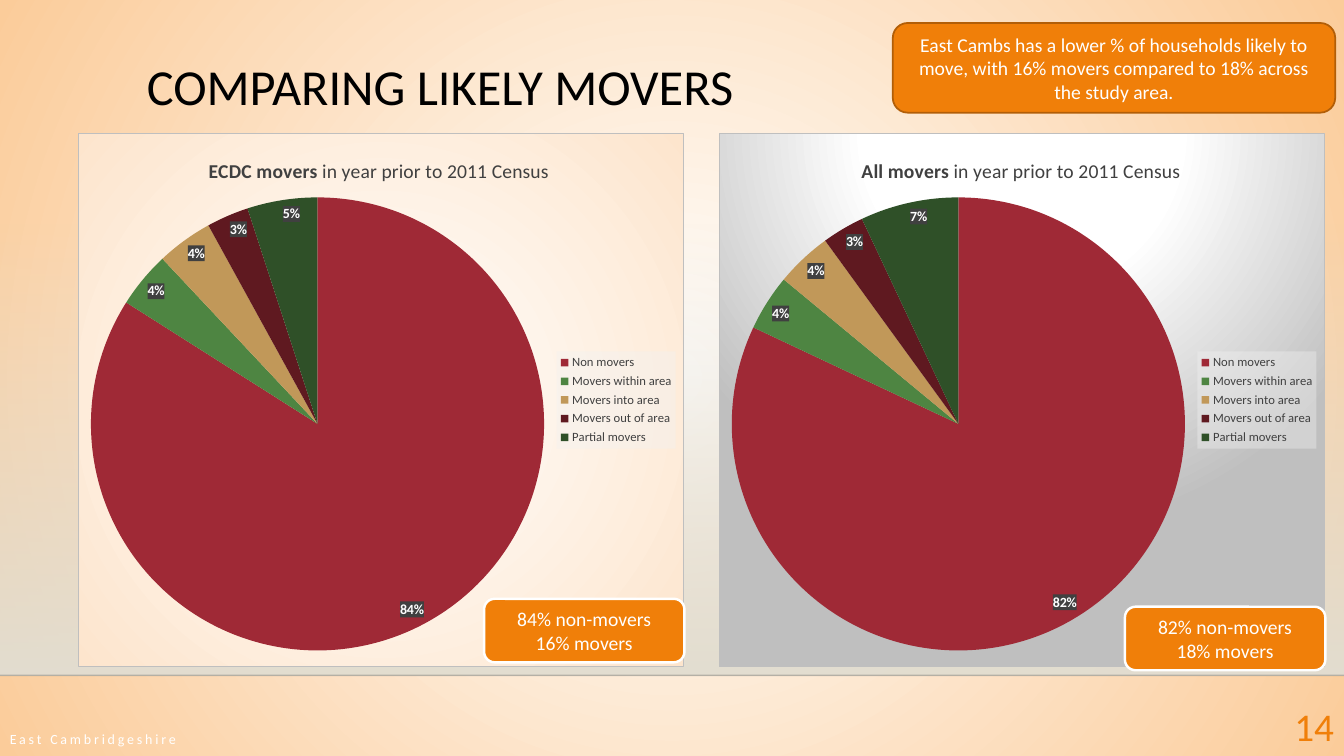
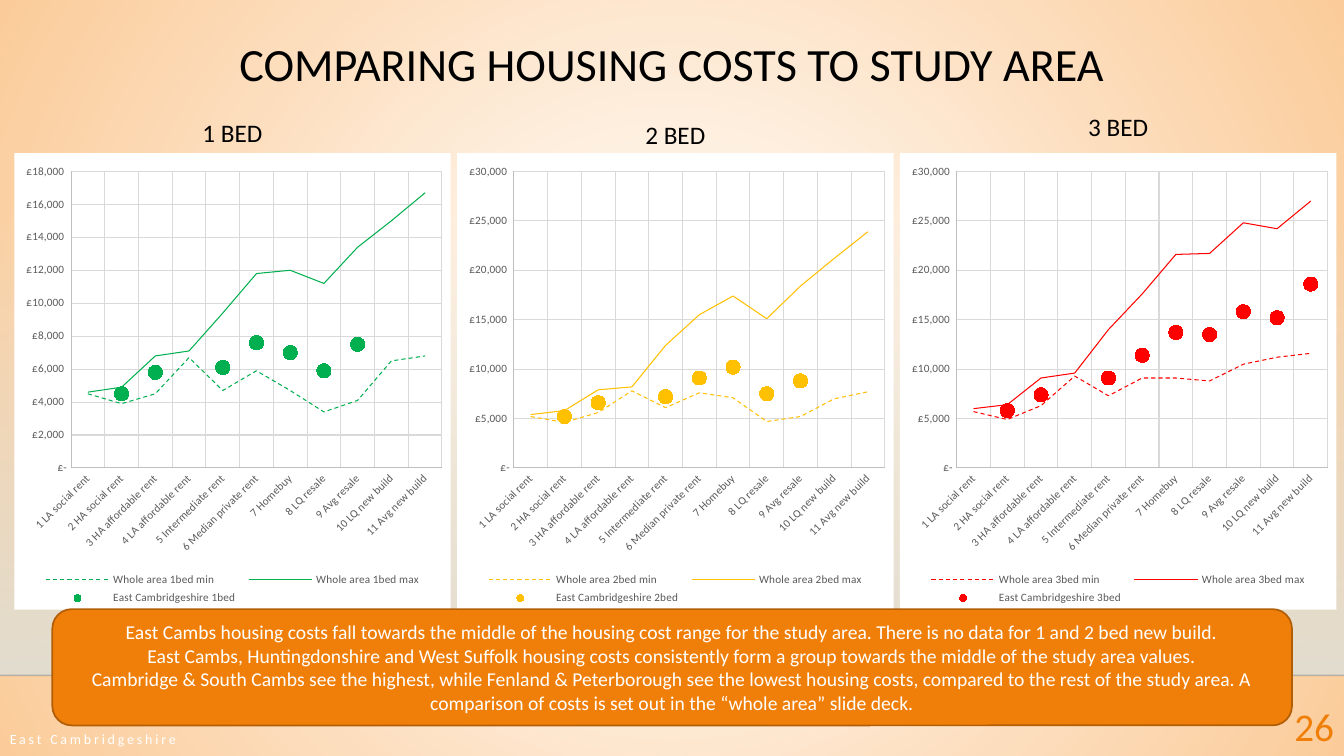
from dataclasses import dataclass
from lxml import etree
from pptx import Presentation
from pptx.chart.data import CategoryChartData
from pptx.dml.color import RGBColor
from pptx.enum.chart import (XL_CHART_TYPE, XL_LABEL_POSITION, XL_LEGEND_POSITION,
                             XL_MARKER_STYLE, XL_TICK_MARK)
from pptx.enum.dml import MSO_LINE
from pptx.enum.shapes import MSO_CONNECTOR, MSO_SHAPE
from pptx.enum.text import MSO_ANCHOR, MSO_AUTO_SIZE, PP_ALIGN
from pptx.oxml.ns import nsdecls, qn
from pptx.util import Cm, Pt


@dataclass(frozen=True)
class Theme:
    font: str = "Calibri"
    black: str = "000000"
    white: str = "FFFFFF"
    accent: str = "F07F09"
    accent_dark: str = "B25E07"
    peach: str = "FBCC9A"
    peach_light: str = "FDE5CD"
    stone: str = "E3DED1"
    rule: str = "000001"
    silver: str = "BFBFBF"
    grid: str = "D9D9D9"
    legend_back: str = "F2F2F2"
    axis_text: str = "595959"
    dark: str = "404040"
    slices: tuple = ("9F2936", "4E8542", "C19859", "5F1920", "2F5028")
    body: int = 14
    heading: int = 18
    number: int = 28
    small: int = 10
    legend: int = 9
    axis: int = 8


@dataclass(frozen=True)
class Box:
    x: float
    y: float
    w: float
    h: float

    def cm(self):
        return Cm(self.x), Cm(self.y), Cm(self.w), Cm(self.h)


T = Theme()
WIDTH, HEIGHT = 33.87, 19.05
CENTRE = (50, 50, 50, 50)
MOVER_GROUPS = ("Non movers", "Movers within area", "Movers into area",
                "Movers out of area", "Partial movers")
TENURES = ("1 LA social rent", "2 HA social rent", "3 HA affordable rent",
           "4 LA affordable rent", "5 Intermediate rent", "6 Median private rent",
           "7 Homebuy", "8 LQ resale", "9 Avg resale", "10 LQ new build",
           "11 Avg new build")
POUNDS = '_-"£"* #,##0_-;\\-"£"* #,##0_-;_-"£"* "-"'


# XML helpers
def rgb(code):
    return RGBColor.from_string(code)


def color_xml(code, alpha=100):
    return f'<a:srgbClr val="{code}"><a:alpha val="{alpha * 1000}"/></a:srgbClr>'


def solid_xml(code, alpha=100):
    return f"<a:solidFill>{color_xml(code, alpha)}</a:solidFill>"


def gradient_xml(stops, centre=None):
    """Circular around the centre, or running downwards without one."""
    gs = "".join(f'<a:gs pos="{pos * 1000}">{color_xml(*c)}</a:gs>' for pos, *c in stops)
    if centre:
        sides = " ".join(f'{k}="{v * 1000}"' for k, v in zip("ltrb", centre))
        way = f'<a:path path="circle"><a:fillToRect {sides}/></a:path>'
    else:
        way = '<a:lin ang="5400000" scaled="0"/>'
    return f'<a:gradFill {nsdecls("a")} rotWithShape="1"><a:gsLst>{gs}</a:gsLst>{way}</a:gradFill>'


def chart_fill(after, fill, border=None):
    line = f'<a:ln w="9525">{solid_xml(border)}</a:ln>' if border else "<a:ln><a:noFill/></a:ln>"
    after.addnext(etree.fromstring(f'<c:spPr {nsdecls("c", "a")}>{fill}{line}</c:spPr>'))


def set_layout(parent, index, inner=False, **place):
    for old in parent.findall(qn("c:layout")):
        parent.remove(old)
    target = '<c:layoutTarget val="inner"/>' if inner else ""
    modes = "".join(f'<c:{k}Mode val="edge"/>' for k in "xy")
    sizes = "".join(f'<c:{k} val="{v}"/>' for k, v in place.items())
    parent.insert(index, etree.fromstring(
        f'<c:layout {nsdecls("c")}><c:manualLayout>{target}{modes}{sizes}'
        "</c:manualLayout></c:layout>"))


# Text and shapes
def style_font(font, size, color, bold=None):
    font.name, font.size, font.bold = T.font, Pt(size), bold
    font.color.rgb = rgb(color)


def write(sp, lines, size, color, align=PP_ALIGN.LEFT, anchor=MSO_ANCHOR.TOP, spacing=None):
    tf = sp.text_frame
    tf.word_wrap, tf.auto_size, tf.vertical_anchor = True, MSO_AUTO_SIZE.NONE, anchor
    tf.text = "\n".join(lines)
    for p in tf.paragraphs:
        p.alignment, p.line_spacing = align, spacing
        for r in p.runs:
            style_font(r.font, size, color)


def add_text(slide, box, text, size, color, **layout):
    sp = slide.shapes.add_textbox(*box.cm())
    write(sp, [text], size, color, **layout)
    return sp


def add_callout(slide, box, lines, border=T.accent_dark, weight=1.25):
    sp = slide.shapes.add_shape(MSO_SHAPE.ROUNDED_RECTANGLE, *box.cm())
    sp.shadow.inherit = False
    sp.fill.solid()
    sp.fill.fore_color.rgb = rgb(T.accent)
    sp.line.color.rgb = rgb(border)
    sp.line.width = Pt(weight)
    write(sp, lines, T.body, T.white, PP_ALIGN.CENTER, MSO_ANCHOR.MIDDLE)


# Shared background, band and rule on the master
def dress_master(prs, slide):
    master = prs.slide_master
    master.background.fill.background()
    empty = master._element.find(".//" + qn("a:noFill"))
    empty.getparent().replace(empty, etree.fromstring(
        gradient_xml([(0, T.white), (100, T.peach)], CENTRE)))
    band = Box(0, 5.61, WIDTH, 11.41)
    sp = slide.shapes.add_shape(MSO_SHAPE.RECTANGLE, *band.cm())
    sp.shadow.inherit = False
    sp.line.fill.background()
    sp.fill.background()
    sp._element.spPr.replace(sp._element.spPr.find(qn("a:noFill")), etree.fromstring(
        gradient_xml([(0, T.stone, 0), (100, T.stone)])))
    bottom = Cm(band.y + band.h)
    rule = slide.shapes.add_connector(MSO_CONNECTOR.STRAIGHT, 0, bottom, Cm(WIDTH), bottom)
    rule.line.width = Pt(1)
    rule.line.color.rgb = rgb(T.rule)
    spPr = rule._element.spPr
    etree.SubElement(spPr.find(".//" + qn("a:srgbClr")), qn("a:alpha"), val="20000")
    etree.SubElement(spPr, qn("a:effectLst"))
    for part in (sp, rule):
        master.shapes._spTree.append(part._element)


def add_title(slide, box, text, size, align, spacing):
    title = slide.shapes.title
    title.left, title.top, title.width, title.height = box.cm()
    write(title, [text], size, T.black, align, MSO_ANCHOR.MIDDLE, spacing)


def add_footer(slide, number):
    sp = add_text(slide, Box(0, 18.19, 14, 0.86), "East Cambridgeshire", T.small, T.white,
                  anchor=MSO_ANCHOR.MIDDLE)
    sp.text_frame.paragraphs[0].runs[0]._r.get_or_add_rPr().set("spc", "200")
    add_text(slide, Box(31.62, 17.58, 2.25, 1.4), str(number), T.number, T.accent,
             align=PP_ALIGN.RIGHT)


# Charts
def add_chart(slide, box, kind, data, legend_position, legend_size, legend_color):
    chart = slide.shapes.add_chart(kind, *box.cm(), data).chart
    style_font(chart.font, T.small, T.black)
    chart.has_legend = True
    chart.legend.position = legend_position
    chart.legend.include_in_layout = False
    style_font(chart.legend.font, legend_size, legend_color)
    return chart


def add_movers_pie(slide, box, who, values, fill, show):
    data = CategoryChartData()
    data.categories = MOVER_GROUPS
    data.add_series("Series 1", values)
    chart = add_chart(slide, box, XL_CHART_TYPE.PIE, data, XL_LEGEND_POSITION.RIGHT,
                      T.legend, T.dark)
    chart_fill(chart._chartSpace.find(qn("c:chart")), fill, T.silver)
    legend = chart.legend._element
    chart_fill(legend.find(qn("c:overlay")), solid_xml(T.legend_back, 39))
    # Title with the bold area name
    chart.has_title = True
    p = chart.chart_title.text_frame.paragraphs[0]
    for text, bold in ((who, True), (" in year prior to 2011 Census", False)):
        r = p.add_run()
        r.text = text
        style_font(r.font, T.body, T.dark, bold)
    set_layout(chart.chart_title._element, 1, x=0.21 if who.startswith("ECDC") else 0.23, y=0.04)
    set_layout(chart._chartSpace.find(".//" + qn("c:plotArea")), 0, True,
               x=0.02, y=0.12, w=0.75, h=0.85)
    # Slices and labels
    plot = chart.plots[0]
    plot.vary_by_categories = True
    for i, color in enumerate(T.slices):
        point = plot.series[0].points[i].format
        point.fill.solid()
        point.fill.fore_color.rgb = rgb(color)
        point.line.fill.background()
    plot.has_data_labels = True
    labels = plot.data_labels
    labels.show_value, labels.show_percentage = show == "value", show == "percent"
    labels.number_format, labels.number_format_is_linked = "0%", False
    labels.position = XL_LABEL_POSITION.INSIDE_END
    style_font(labels.font, T.small, T.white, True)
    chart_fill(labels._element.find(qn("c:numFmt")), solid_xml(T.dark, 90))


def add_cost_chart(slide, box, beds, color, top, step, low, high, local):
    data = CategoryChartData()
    data.categories = TENURES
    for name, values in ((f"Whole area {beds}bed min", low), (f"Whole area {beds}bed max", high),
                         (f"East Cambridgeshire {beds}bed", local)):
        data.add_series(name, values)
    chart = add_chart(slide, box, XL_CHART_TYPE.LINE_MARKERS, data, XL_LEGEND_POSITION.BOTTOM,
                      T.axis, T.axis_text)
    chart.has_title = False
    chart_fill(chart._chartSpace.find(qn("c:chart")), solid_xml(T.white))
    set_layout(chart._chartSpace.find(".//" + qn("c:plotArea")), 0, True,
               x=0.13, y=0.04, w=0.85, h=0.65)
    set_layout(chart.legend._element, 1, x=0.05, y=0.91, w=0.9, h=0.09)
    # Axes
    for axis in (chart.category_axis, chart.value_axis):
        axis.has_major_gridlines = True
        axis.major_tick_mark = axis.minor_tick_mark = XL_TICK_MARK.NONE
        style_font(axis.tick_labels.font, T.axis, T.axis_text)
        for line, shade in ((axis.format.line, T.silver),
                            (axis.major_gridlines.format.line, T.grid)):
            line.color.rgb = rgb(shade)
            line.width = Pt(0.75)
    chart.category_axis._element.find(".//" + qn("a:bodyPr")).set("rot", "-2700000")
    axis = chart.value_axis
    axis.minimum_scale, axis.maximum_scale, axis.major_unit = 0, top, step
    axis.tick_labels.number_format = POUNDS
    axis.tick_labels.number_format_is_linked = False
    # Range lines and local points
    plot = chart.plots[0]
    plot.vary_by_categories = False
    lowest, highest, points = plot.series
    for s in (lowest, highest):
        s.smooth = False
        s.marker.style = XL_MARKER_STYLE.NONE
        s.format.line.color.rgb = rgb(color)
        s.format.line.width = Pt(0.75)
    lowest.format.line.dash_style = MSO_LINE.DASH
    points.smooth = False
    points.format.line.fill.background()
    points.marker.style, points.marker.size = XL_MARKER_STYLE.CIRCLE, 10
    points.marker.format.fill.solid()
    points.marker.format.fill.fore_color.rgb = rgb(color)
    points.marker.format.line.color.rgb = rgb(color)


# Slides
def build_movers(slide):
    add_title(slide, Box(3.45, 0.76, 26.7, 2.95), "COMPARING LIKELY MOVERS", 36,
              PP_ALIGN.LEFT, 0.9)
    glow = gradient_xml([(0, T.white), (100, T.peach_light)], CENTRE)
    spotlight = gradient_xml([(0, T.white), (39, T.white), (100, T.silver)], (50, -80, 50, 180))
    panels = (
        (1.96, "ECDC movers", (84, 4, 4, 3, 5), glow, "percent", 15.09, (84, 16)),
        (18.11, "All movers", (0.82, 0.04, 0.04, 0.03, 0.07), spotlight, "value", 15.29, (82, 18)))
    width, note_width = 15.29, 5.05
    for x, who, values, fill, show, note_y, (stay, move) in panels:
        add_movers_pie(slide, Box(x, 3.35, width, 13.46), who, values, fill, show)
        add_callout(slide, Box(x + width - note_width, note_y, note_width, 1.6),
                    [f"{stay}% non-movers", f"{move}% movers"], T.white, 1.75)
    add_callout(slide, Box(22.5, 0.58, 11.15, 2.26), [
        "East Cambs has a lower % of households likely to move, with 16% movers "
        "compared to 18% across the study area."])
    add_footer(slide, 14)


def build_costs(slide):
    add_title(slide, Box(1.78, 0.99, 30.3, 1.45), "COMPARING HOUSING COSTS TO STUDY AREA", 33,
              PP_ALIGN.CENTER, 0.8)
    charts = (
        (2.84, "00B050", 18000, 2000,
         (4500, 3900, 4500, 6700, 4700, 5900, 4700, 3400, 4100, 6500, 6800),
         (4600, 4900, 6800, 7100, 9400, 11800, 12000, 11200, 13400, 15000, 16700),
         (None, 4500, 5800, None, 6100, 7600, 7000, 5900, 7500, None, None)),
        (2.87, "FFC000", 30000, 5000,
         (5200, 4600, 5600, 7800, 6100, 7600, 7100, 4700, 5200, 7000, 7700),
         (5400, 5800, 7900, 8200, 12400, 15500, 17400, 15100, 18400, 21200, 23900),
         (None, 5200, 6600, None, 7200, 9100, 10200, 7500, 8800, None, None)),
        (2.67, "FF0000", 30000, 5000,
         (5700, 4900, 6300, 9300, 7300, 9100, 9100, 8800, 10500, 11200, 11600),
         (6000, 6400, 9100, 9600, 14000, 17600, 21600, 21700, 24800, 24200, 27000),
         (None, 5800, 7400, None, 9100, 11400, 13700, 13500, 15800, 15200, 18600)))
    width, gap = 11, 0.16
    for i, (heading_y, *chart) in enumerate(charts):
        x = 0.36 + i * (width + gap)
        add_cost_chart(slide, Box(x, 3.86, width, 11.5), i + 1, *chart)
        add_text(slide, Box(x, heading_y, width, 1.02), f"{i + 1} BED", T.heading, T.black,
                 align=PP_ALIGN.CENTER)
    add_callout(slide, Box(1.32, 15.35, 31.24, 2.93), [
        "East Cambs housing costs fall towards the middle of the housing cost range for the "
        "study area. There is no data for 1 and 2 bed new build.",
        "East Cambs, Huntingdonshire and West Suffolk housing costs consistently form a group "
        "towards the middle of the study area values.",
        "Cambridge & South Cambs see the highest, while Fenland & Peterborough see the lowest "
        "housing costs, compared to the rest of the study area. A comparison of costs is set "
        "out in the “whole area” slide deck."])
    add_footer(slide, 26)


def main():
    prs = Presentation()
    prs.slide_width, prs.slide_height = Cm(WIDTH), Cm(HEIGHT)
    title_only = prs.slide_layouts[5]
    movers, costs = (prs.slides.add_slide(title_only) for _ in range(2))
    dress_master(prs, movers)
    build_movers(movers)
    build_costs(costs)
    prs.save("out.pptx")


if __name__ == "__main__":
    main()
